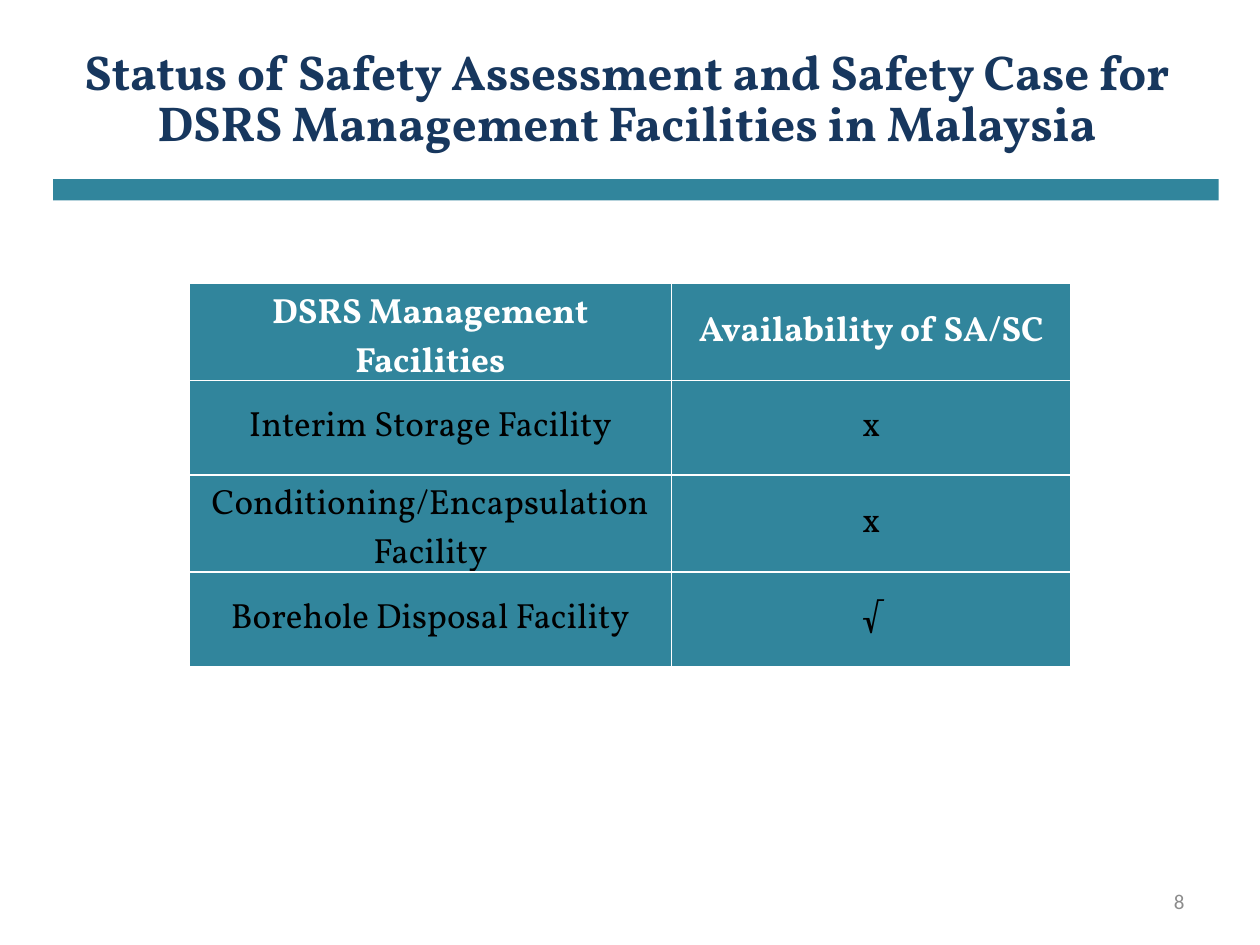
from pptx import Presentation
from pptx.dml.color import RGBColor
from pptx.enum.shapes import MSO_SHAPE as Shape
from pptx.enum.text import MSO_ANCHOR as Anchor, PP_ALIGN as Align
from pptx.util import Cm, Pt

NAVY = RGBColor(0x17, 0x37, 0x5E)
TEAL = RGBColor(0x31, 0x85, 0x9C)
GRAY = RGBColor(0x8C, 0x8C, 0x8C)
WHITE = RGBColor(0xFF, 0xFF, 0xFF)
BLACK = RGBColor(0, 0, 0)
SERIF = "Vollkorn"
SANS = "Calibri"

TITLE = "Status of Safety Assessment and Safety Case for DSRS Management Facilities in Malaysia"
FACILITIES = [
    ("DSRS Management Facilities", "Availability of SA/SC"),
    ("Interim Storage Facility", "x"),
    ("Conditioning/Encapsulation Facility", "x"),
    ("Borehole Disposal Facility", "√"),
]
COLUMN_WIDTHS = (Cm(9.73), Cm(8.05))
ROW_HEIGHT = Cm(1.91)


def style_paragraph(paragraph, size, color, name=SERIF, bold=False, align=Align.CENTER):
    """Set the font and alignment of a paragraph."""
    paragraph.alignment = align
    font = paragraph.font
    font.name, font.size, font.bold = name, Pt(size), bold
    font.color.rgb = color


def add_text(slide, text, left, top, width, height, **style):
    """Add a wrapped, vertically centred text box and return its paragraph."""
    frame = slide.shapes.add_textbox(left, top, width, height).text_frame
    frame.word_wrap = True
    frame.vertical_anchor = Anchor.MIDDLE
    frame.text = text
    paragraph = frame.paragraphs[0]
    style_paragraph(paragraph, **style)
    return paragraph


def add_bar(slide, left, top, width, height):
    """Add the plain teal bar under the title."""
    bar = slide.shapes.add_shape(Shape.RECTANGLE, left, top, width, height)
    bar.shadow.inherit = False
    bar.fill.solid()
    bar.fill.fore_color.rgb = TEAL
    bar.line.fill.background()


def add_facility_table(slide, left, top):
    """Add the table of facilities with a bold white header row."""
    table = slide.shapes.add_table(
        len(FACILITIES), len(COLUMN_WIDTHS), left, top,
        sum(COLUMN_WIDTHS), ROW_HEIGHT * len(FACILITIES),
    ).table
    for column, width in zip(table.columns, COLUMN_WIDTHS):
        column.width = width
    for row_index, values in enumerate(FACILITIES):
        is_header = row_index == 0
        for column_index, value in enumerate(values):
            cell = table.cell(row_index, column_index)
            cell.text = value
            cell.vertical_anchor = Anchor.MIDDLE
            cell.fill.solid()
            cell.fill.fore_color.rgb = TEAL
            style_paragraph(cell.text_frame.paragraphs[0], size=20,
                            color=WHITE if is_header else BLACK, bold=is_header)


def main():
    """Build the slide and save it."""
    presentation = Presentation()
    presentation.slide_width, presentation.slide_height = Cm(25.4), Cm(19.05)
    slide = presentation.slides.add_slide(presentation.slide_layouts[6])
    title = add_text(slide, TITLE, Cm(0.71), Cm(0.84), Cm(23.85), Cm(2.39),
                     size=28, color=NAVY, bold=True)
    title.line_spacing = 0.86
    add_text(slide, "8", Cm(18.21), Cm(17.65), Cm(5.92), Cm(1.02),
             size=12, color=GRAY, name=SANS, align=Align.RIGHT)
    add_facility_table(slide, Cm(3.81), Cm(5.72))
    add_bar(slide, Cm(1.07), Cm(3.61), Cm(23.5), Cm(0.43))
    presentation.save("out.pptx")


if __name__ == "__main__":
    main()
